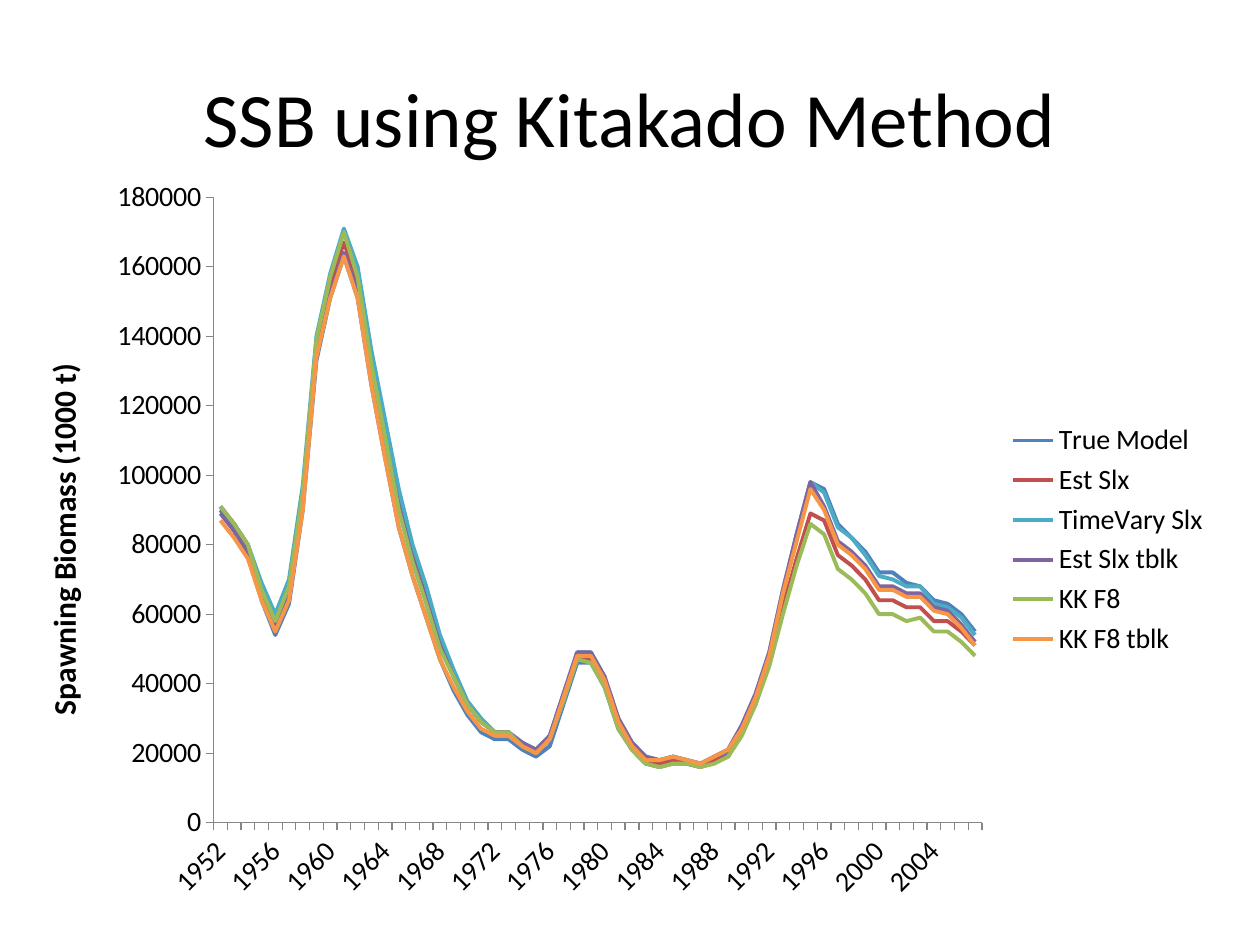
"""Build the slide with the spawning biomass line chart."""
from lxml import etree
from pptx import Presentation
from pptx.chart.data import CategoryChartData
from pptx.dml.color import RGBColor
from pptx.enum.chart import XL_CHART_TYPE, XL_LEGEND_POSITION, XL_TICK_MARK
from pptx.enum.text import MSO_ANCHOR, PP_ALIGN
from pptx.oxml import parse_xml
from pptx.oxml.ns import nsdecls, qn
from pptx.util import Pt

LINE = XL_CHART_TYPE.LINE
RIGHT = XL_LEGEND_POSITION.RIGHT
OUTSIDE, NO_TICK = XL_TICK_MARK.OUTSIDE, XL_TICK_MARK.NONE
MIDDLE, CENTER = MSO_ANCHOR.MIDDLE, PP_ALIGN.CENTER

FIRST_YEAR = 1952
BASE = [89, 84, 78, 66, 57, 66, 92, 135, 152, 164, 153, 130, 110, 91, 76, 64, 51, 42, 34,
        29, 26, 26, 23, 21, 25, 37, 49, 49, 42, 30, 23, 19, 18, 19, 18, 17, 19, 21,
        28, 37, 49, 67, 83, 98, 91, 81, 78, 74, 68, 68, 66, 66, 62, 61, 57, 52]
KNOTS = [0, 4, 9, 13, 20, 28, 35, 40, 43, 44, 48, 52, 55]
MODELS = [
    ("True Model", "4F81BD", [1, -3, -1, -6, -2, -3, -1, -1, 0, 5, 4, 2, 3]),
    ("Est Slx", "C0504D", [2, 2, 3, 1, 0, -2, -1, -3, -9, -4, -4, -4, -1]),
    ("TimeVary Slx", "4BACC6", [2, 3, 7, 5, 0, 0, 0, 0, 0, 4, 3, 1, 2]),
    ("Est Slx tblk", "8064A2", [0] * len(KNOTS)),
    ("KK F8", "9BBB59", [2, 1, 6, -1, 0, -3, -1, -4, -12, -8, -8, -7, -4]),
    ("KK F8 tblk", "F79646", [-2, -2, -1, -6, -1, -1, 0, -1, -2, -1, -1, -1, -1]),
]


def rgb(value):
    return RGBColor.from_string(value)


def biomass(offsets):
    values = [BASE[0] + offsets[0]]
    spans = zip(KNOTS, KNOTS[1:], offsets, offsets[1:])
    for start, end, low, high in spans:
        for i in range(start + 1, end + 1):
            shift = low + (high - low) * (i - start) / (end - start)
            values.append(round(BASE[i] + shift))
    return [1000 * value for value in values]


class Deck:
    font, ink, axis_ink = "Calibri", "000000", "868686"

    def __init__(self, width, height):
        self.prs = Presentation()
        self.prs.slide_width, self.prs.slide_height = Pt(width), Pt(height)
        self.s = self.prs.slides.add_slide(self.prs.slide_layouts[5])

    def style(self, font, size, **extra):
        for name, value in dict(name=self.font, size=Pt(size), **extra).items():
            setattr(font, name, value)
        font.color.rgb = rgb(self.ink)

    def title(self, text, x, y, w, h, size):
        sp = self.s.shapes.title
        sp.left, sp.top, sp.width, sp.height = Pt(x), Pt(y), Pt(w), Pt(h)
        tf = sp.text_frame
        tf.vertical_anchor = MIDDLE
        p = tf.paragraphs[0]
        p.alignment = CENTER
        r = p.add_run()
        r.text = text
        self.style(r.font, size)

    def axis(self, axis, **formats):
        formats = dict(has_major_gridlines=False, major_tick_mark=OUTSIDE,
                       minor_tick_mark=NO_TICK, **formats)
        for name, value in formats.items():
            setattr(axis, name, value)
        self.style(axis.tick_labels.font, 16)
        axis.format.line.color.rgb = rgb(self.axis_ink)
        axis.format.line.width = Pt(0.75)

    def line_chart(self, models, axis_title, x, y, w, h, plot):
        data = CategoryChartData(number_format="General")
        data.categories = [str(FIRST_YEAR + i) for i in range(len(BASE))]
        for name, _, offsets in models:
            data.add_series(name, biomass(offsets))
        chart = self.s.shapes.add_chart(LINE, Pt(x), Pt(y), Pt(w), Pt(h), data).chart
        self.style(chart.font, 10)
        chart.has_title = False
        chart.has_legend = True
        chart.legend.position = RIGHT
        chart.legend.include_in_layout = False
        self.style(chart.legend.font, 16)
        chart.plots[0].vary_by_categories = False
        for ser, (_, color, _) in zip(chart.plots[0].series, models):
            ser.smooth = False
            ser.format.line.color.rgb = rgb(color)
            ser.format.line.width = Pt(2.25)
        self.axis(chart.category_axis)
        self.axis(chart.value_axis, minimum_scale=0, maximum_scale=180000,
                  major_unit=20000)
        self.slant_labels(chart.category_axis, 4)
        p = chart.value_axis.axis_title.text_frame.paragraphs[0]
        r = p.add_run()
        r.text = axis_title
        self.style(r.font, 18, bold=True)
        self.place_plot(chart, plot)

    def slant_labels(self, axis, step):
        cat_ax = axis._element
        cat_ax.find(qn("c:txPr")).find(qn("a:bodyPr")).set("rot", "-2700000")
        skip = etree.Element(qn("c:tickLblSkip"), val=str(step))
        cat_ax.find(qn("c:noMultiLvlLbl")).addprevious(skip)

    def place_plot(self, chart, plot):
        area = chart._chartSpace.chart.plotArea
        for old in area.findall(qn("c:layout")):
            area.remove(old)
        parts = ["<c:layoutTarget val='inner'/>",
                 "<c:xMode val='edge'/><c:yMode val='edge'/>"]
        parts += [f"<c:{key} val='{value}'/>" for key, value in zip("xywh", plot)]
        area.insert(0, parse_xml(f"<c:layout {nsdecls('c')}><c:manualLayout>"
                                 f"{''.join(parts)}</c:manualLayout></c:layout>"))


def main():
    deck = Deck(720, 540)
    deck.title("SSB using Kitakado Method", 36, 21.6, 648, 90, 44)
    deck.line_chart(MODELS, "Spawning Biomass (1000 t)",
                    12.24, 95.76, 686.16, 425.52, plot=(0.16, 0.04, 0.64, 0.84))
    deck.prs.save("out.pptx")


if __name__ == "__main__":
    main()
